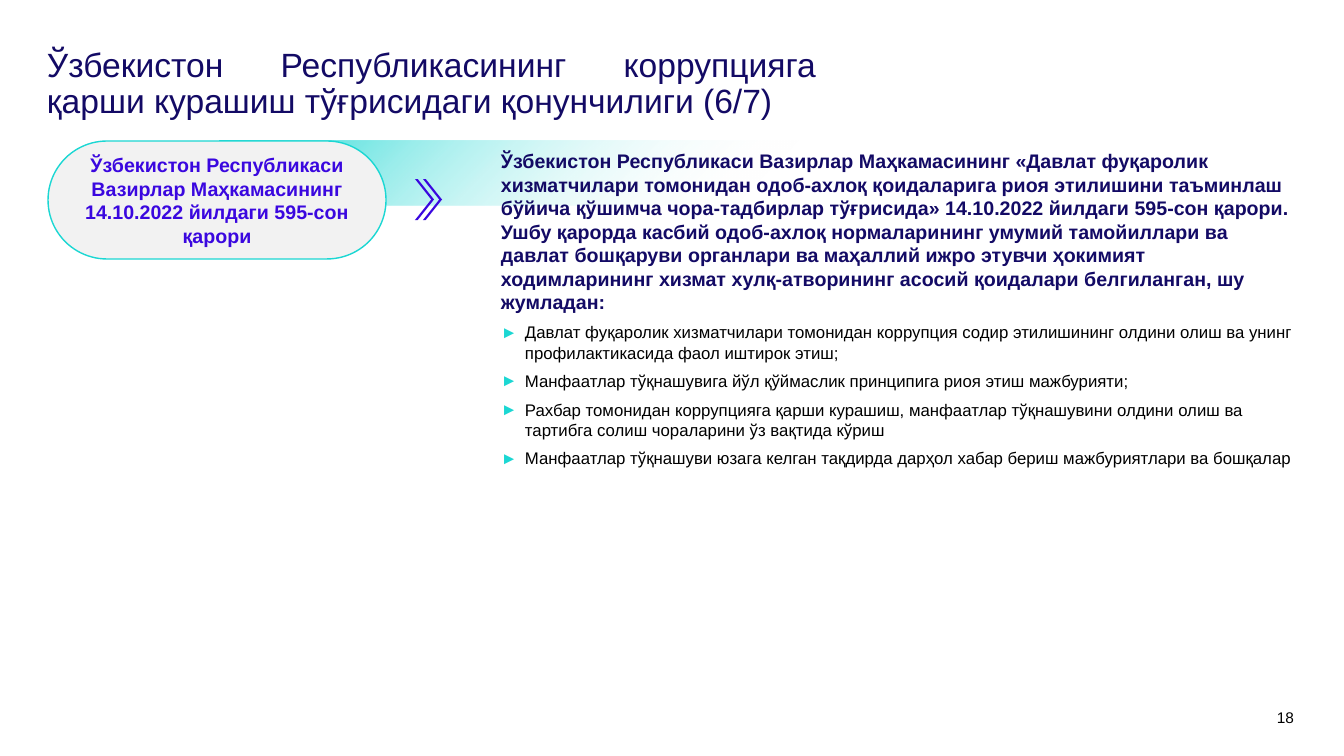
from lxml.etree import SubElement
from pptx import Presentation
from pptx.dml.color import RGBColor
from pptx.enum.shapes import MSO_SHAPE as Preset
from pptx.enum.text import MSO_ANCHOR as Anchor, MSO_AUTO_SIZE as AutoSize, PP_ALIGN as Align
from pptx.oxml.ns import qn
from pptx.util import Pt

PX = 914400 / 100.8
NAVY, VIOLET, TEAL, GREY, BLACK, WHITE = "130A65", "3A07DF", "1BD7D3", "F2F2F2", "000000", "FFFFFF"

TITLE = "Ўзбекистон Республикасининг коррупцияга қарши курашиш тўғрисидаги қонунчилиги (6/7)"
DECREE = "Ўзбекистон Республикаси Вазирлар Маҳкамасининг 14.10.2022 йилдаги 595-сон қарори"
SUMMARY = (
    "Ўзбекистон Республикаси Вазирлар Маҳкамасининг «Давлат фуқаролик хизматчилари томонидан "
    "одоб-ахлоқ қоидаларига риоя этилишини таъминлаш бўйича қўшимча чора-тадбирлар тўғрисида» "
    "14.10.2022 йилдаги 595-сон қарори. Ушбу қарорда касбий одоб-ахлоқ нормаларининг умумий "
    "тамойиллари ва давлат бошқаруви органлари ва маҳаллий ижро этувчи ҳокимият ходимларининг "
    "хизмат хулқ-атворининг асосий қоидалари белгиланган, шу жумладан:"
)
RULES = [
    "Давлат фуқаролик хизматчилари томонидан коррупция содир этилишининг олдини олиш ва унинг "
    "профилактикасида фаол иштирок этиш;",
    "Манфаатлар тўқнашувига йўл қўймаслик принципига риоя этиш мажбурияти;",
    "Рахбар томонидан коррупцияга қарши курашиш, манфаатлар тўқнашувини олдини олиш ва тартибга "
    "солиш чораларини ўз вақтида кўриш",
    "Манфаатлар тўқнашуви юзага келган тақдирда дарҳол хабар бериш мажбуриятлари ва бошқалар",
]


def px(value):
    return round(value * PX)


def color(value):
    return RGBColor.from_string(value)


def apply(target, values):
    for name, value in values.items():
        setattr(target, name, value)


class SlideBuilder:
    font = "Arial"

    def __init__(self, presentation):
        self.slide = presentation.slides.add_slide(presentation.slide_layouts[5])

    def frame(self, shape, insets=(0, 0, 0, 0), anchor=Anchor.TOP, auto_size=AutoSize.NONE):
        left, top, right, bottom = map(px, insets)
        apply(shape.text_frame, dict(
            margin_left=left, margin_top=top, margin_right=right, margin_bottom=bottom,
            vertical_anchor=anchor, word_wrap=True, auto_size=auto_size))
        return shape.text_frame

    def fill_paragraph(self, paragraph, text, size, ink, bold=False, bullet=None, **layout):
        if bullet:
            self.bullet(paragraph, bullet)
        paragraph.text = text
        apply(paragraph, layout)
        apply(paragraph.font, dict(name=self.font, size=Pt(size), bold=bold))
        paragraph.font.color.rgb = color(ink)

    def bullet(self, paragraph, ink, indent=24):
        properties = paragraph._p.get_or_add_pPr()
        properties.set("marL", str(px(indent)))
        properties.set("indent", str(-px(indent)))
        bullet_color = SubElement(properties, qn("a:buClr"))
        SubElement(bullet_color, qn("a:srgbClr"), val=ink)
        SubElement(properties, qn("a:buFont"), typeface=self.font)
        SubElement(properties, qn("a:buChar"), char="►")

    def title(self, box, text, **style):
        shape = self.slide.shapes.title
        apply(shape, dict(zip(("left", "top", "width", "height"), map(px, box))))
        self.fill_paragraph(self.frame(shape).paragraphs[0], text, **style)

    def text(self, box, paragraphs, **frame):
        shape = self.slide.shapes.add_textbox(*map(px, box))
        text_frame = self.frame(shape, **frame)
        for index, style in enumerate(paragraphs):
            paragraph = text_frame.add_paragraph() if index else text_frame.paragraphs[0]
            self.fill_paragraph(paragraph, **style)

    def shape(self, preset, box, fill=None, line=None, adjustment=None, parent=None):
        shape = (parent or self.slide).shapes.add_shape(preset, *map(px, box))
        shape.shadow.inherit = False
        if fill:
            shape.fill.solid()
            shape.fill.fore_color.rgb = color(fill)
        if line:
            shape.line.color.rgb = color(line)
            shape.line.width = Pt(1)
        else:
            shape.line.fill.background()
        if adjustment is not None:
            shape.adjustments[0] = adjustment
        return shape

    def fading_band(self, box, ink):
        fill = self.shape(Preset.RECTANGLE, box).fill
        fill.gradient()
        fill.gradient_angle = 135
        for stop, position, stop_ink in zip(fill.gradient_stops, (0.49, 1), (WHITE, ink)):
            stop.position = position
            stop.color.rgb = color(stop_ink)
        clear = fill.gradient_stops[0]._gs.find(qn("a:srgbClr"))
        SubElement(clear, qn("a:alpha"), val="0")

    def pill(self, box, text, **style):
        shape = self.shape(Preset.ROUNDED_RECTANGLE, box, GREY, TEAL, 0.5)
        text_frame = self.frame(shape, (5, 5, 5, 5), Anchor.MIDDLE)
        self.fill_paragraph(text_frame.paragraphs[0], text, alignment=Align.CENTER, **style)

    def double_chevron(self, left, top, width, height, step, ink):
        group = self.slide.shapes.add_group_shape()
        for offset in (0, step):
            self.shape(Preset.CHEVRON, (left + offset, top, width, height), ink,
                       adjustment=0.854, parent=group)


def main():
    presentation = Presentation()
    apply(presentation, dict(slide_width=px(1344), slide_height=px(756)))
    builder = SlideBuilder(presentation)

    # Title and page number
    builder.title((47, 48, 769, 48), TITLE, size=24, ink=NAVY,
                  alignment=Align.JUSTIFY, line_spacing=0.9)
    builder.text((1251, 708, 43, 16), [dict(text="18", size=11, ink=BLACK, alignment=Align.RIGHT)])

    # Decree name on its band
    builder.fading_band((220, 141, 1075, 64), TEAL)
    builder.pill((48, 141, 338, 118), DECREE, size=14, ink=VIOLET, bold=True)

    # Summary and rules
    summary = dict(text=SUMMARY, size=14, ink=NAVY, bold=True, space_after=Pt(6))
    rules = [dict(text=rule, size=12, ink=BLACK, bullet=TEAL, space_after=Pt(6)) for rule in RULES]
    builder.text((501, 141, 794, 331), [summary, *rules],
                 insets=(0, 8, 0, 0), auto_size=AutoSize.SHAPE_TO_FIT_TEXT)

    # Arrow from decree to summary
    builder.double_chevron(415, 179, 19, 41, step=8, ink=VIOLET)

    presentation.save("out.pptx")


if __name__ == "__main__":
    main()
